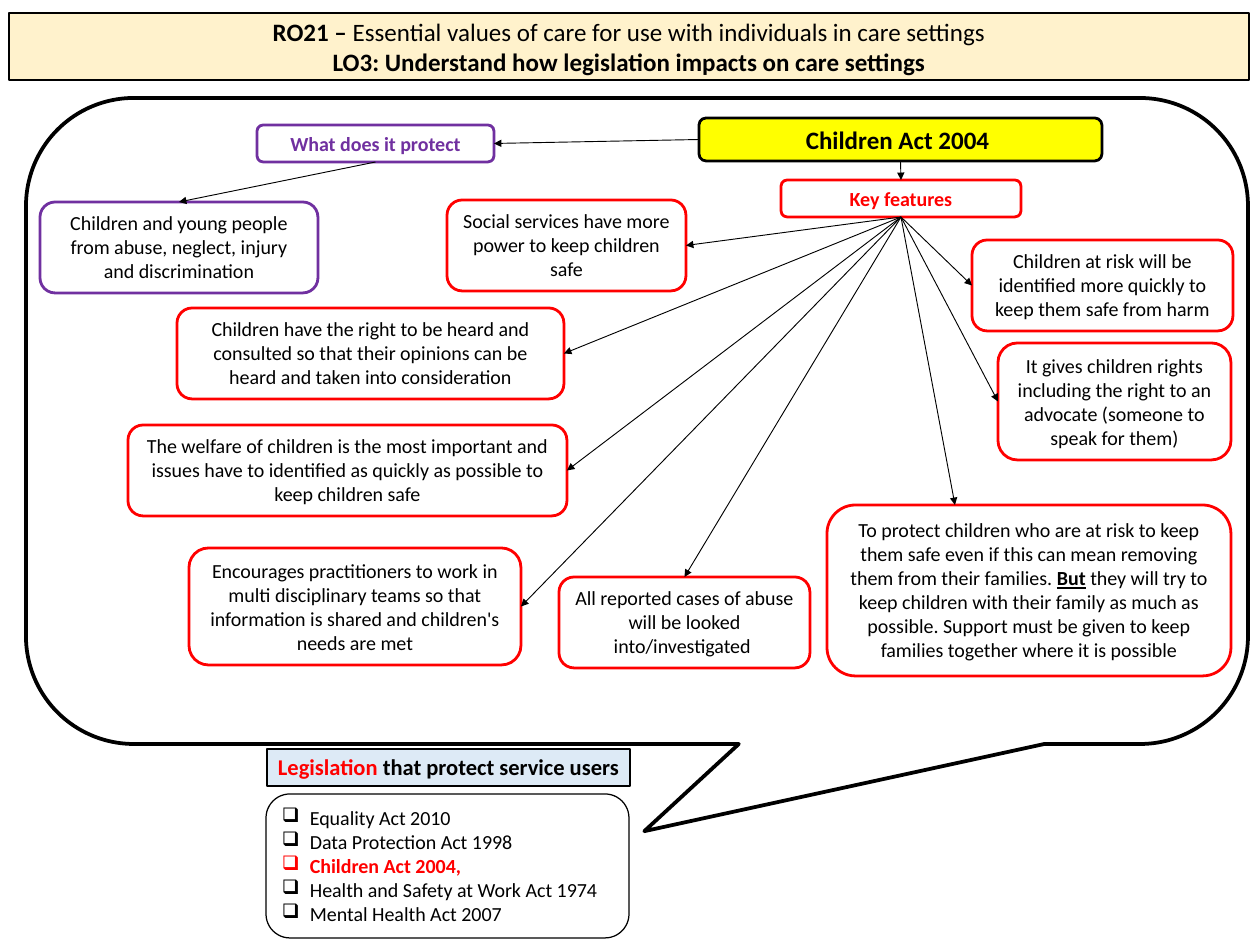
from lxml import etree
from pptx import Presentation
from pptx.dml.color import RGBColor
from pptx.enum.shapes import MSO_CONNECTOR, MSO_SHAPE
from pptx.enum.text import MSO_ANCHOR, MSO_AUTO_SIZE, PP_ALIGN
from pptx.oxml.ns import qn
from pptx.util import Pt

PX = 10160  # EMU per px, 90 px to the inch
BLACK = RGBColor(0x00, 0x00, 0x00)
WHITE = RGBColor(0xFF, 0xFF, 0xFF)
RED = RGBColor(0xFF, 0x00, 0x00)
PURPLE = RGBColor(0x70, 0x30, 0xA0)
YELLOW = RGBColor(0xFF, 0xFF, 0x00)
CREAM = RGBColor(0xFF, 0xF2, 0xCC)
BLUE = RGBColor(0xDD, 0xEA, 0xF6)
RECT = MSO_SHAPE.RECTANGLE
ROUND = MSO_SHAPE.ROUNDED_RECTANGLE
CALLOUT = MSO_SHAPE.ROUNDED_RECTANGULAR_CALLOUT
LINE = MSO_CONNECTOR.STRAIGHT
CENTER, LEFT = PP_ALIGN.CENTER, PP_ALIGN.LEFT
TOP, MIDDLE = MSO_ANCHOR.TOP, MSO_ANCHOR.MIDDLE
GROW, FIXED = MSO_AUTO_SIZE.SHAPE_TO_FIT_TEXT, MSO_AUTO_SIZE.NONE
UP, WEST, DOWN, EAST = range(4)

prs = Presentation()
prs.slide_width, prs.slide_height = 1260 * PX, 945 * PX
slide = prs.slides.add_slide(prs.slide_layouts[5])
shapes = slide.shapes


def box(kind, place, fill, edge, width, size=16, color=BLACK, bold=False, text=""):
    """Add a box with one centred style of text."""
    shape = shapes.add_shape(kind, *[n * PX for n in place])
    shape.shadow.inherit = False
    if fill is None:
        shape.fill.background()
    else:
        shape.fill.solid()
        shape.fill.fore_color.rgb = fill
    shape.line.color.rgb = edge
    shape.line.width = Pt(width)
    if text:
        frame = shape.text_frame
        frame.text = text
        frame.word_wrap = True
        frame.auto_size = GROW
        frame.vertical_anchor = TOP
        for para in frame.paragraphs:
            para.alignment = CENTER
            for run in para.runs:
                font = run.font
                font.name, font.size, font.bold = "Calibri", Pt(size), bold
                font.color.rgb = color
    return shape


def arrow(start, side, end, goal):
    """Join two boxes; goal is a side number or a free (x, y) point."""
    line = shapes.add_connector(LINE, 0, 0, 0, 0)
    line.begin_connect(start, side)
    if isinstance(goal, tuple):
        line.end_x, line.end_y = [n * PX for n in goal]
    else:
        line.end_connect(end, goal)
    line.line.color.rgb = BLACK
    line.line.width = Pt(0.75)
    tip = etree.SubElement(line.line._get_or_add_ln(), qn("a:tailEnd"))
    tip.set("type", "triangle")
    etree.SubElement(line._element.spPr, qn("a:effectLst"))


# Title banner
title = shapes.title
title.left, title.top, title.width, title.height = [n * PX for n in (9, 13, 1240, 67)]
title.fill.solid()
title.fill.fore_color.rgb = CREAM
title.line.color.rgb = BLACK
title.line.width = Pt(1)
frame = title.text_frame
frame.auto_size = FIXED
frame.vertical_anchor = MIDDLE
frame.text = "RO21 – \nLO3: Understand how legislation impacts on care settings"
run = frame.paragraphs[0].add_run()
run.text = "Essential values of care for use with individuals in care settings"
for para in frame.paragraphs:
    para.alignment = CENTER
    for part in para.runs:
        part.font.name, part.font.size = "Calibri", Pt(20)
        part.font.bold = True
        part.font.color.rgb = BLACK
run.font.bold = False

# Speech bubble
bubble = box(CALLOUT, (26, 98, 1222, 646), None, BLACK, 3)
for i, value in enumerate((0.006, 0.635, 0.167)):
    bubble.adjustments[i] = value

# Headings
act = box(ROUND, (699, 118, 403, 43), YELLOW, BLACK, 2.25, 20, BLACK, True,
          "Children Act 2004 ")
key = box(ROUND, (781, 180, 240, 37), WHITE, RED, 2.25, 16, RED, True, "Key features")
ask = box(ROUND, (257, 125, 237, 37), WHITE, PURPLE, 2.25, 16, PURPLE, True,
          "What does it protect")
young = box(ROUND, (40, 202, 278, 91), None, PURPLE, 2.25,
            text="Children and young people from abuse, neglect, injury and discrimination")
arrow(act, WEST, ask, EAST)
arrow(ask, DOWN, young, UP)
arrow(act, DOWN, key, UP)

# Key features, each with an arrow from its heading
features = [
    ((447, 200, 239, 91), EAST, "Social services have more power to keep children safe"),
    ((177, 308, 387, 91), EAST, "Children have the right to be heard and consulted so that "
     "their opinions can be heard and taken into consideration"),
    ((128, 425, 439, 91), EAST, "The welfare of children is the most important and issues "
     "have to identified as quickly as possible to keep children safe"),
    ((189, 548, 332, 117), EAST, "Encourages practitioners to work in multi disciplinary "
     "teams so that information is shared and children's needs are met"),
    ((559, 577, 251, 91), UP, "All reported cases of abuse will be looked into/investigated "),
    ((972, 240, 261, 91), WEST, "Children at risk will be identified more quickly to keep "
     "them safe from harm"),
    ((998, 343, 233, 117), WEST, "It gives children rights including the right to an "
     "advocate (someone to speak for them)"),
    ((827, 505, 404, 171), (955, 505), "To protect children who are at risk to keep them safe "
     "even if this can mean removing them from their families. "),
]
for place, goal, text in features:
    card = box(ROUND, place, None, RED, 2.25, text=text)
    arrow(key, DOWN, card, goal)

# The last card goes on after a stressed word
para = card.text_frame.paragraphs[0]
for text, stress in (("But", True), (" they will try to keep children with their family as "
                     "much as possible. Support must be given to keep families together "
                     "where it is possible", False)):
    run = para.add_run()
    run.text = text
    run.font.name, run.font.size = "Calibri", Pt(16)
    run.font.bold = run.font.underline = stress
    run.font.color.rgb = BLACK

# Legislation heading
head = box(RECT, (267, 749, 363, 37), BLUE, BLACK, 1, 18, RED, True, "Legislation ")
run = head.text_frame.paragraphs[0].add_run()
run.text = "that protect service users"
run.font.name, run.font.size, run.font.bold = "Calibri", Pt(18), True
run.font.color.rgb = BLACK

# Checklist of acts
acts = ["Equality Act 2010", "Data Protection Act 1998", "Children Act 2004,",
        "Health and Safety at Work Act 1974", "Mental Health Act 2007"]
checks = box(ROUND, (266, 794, 363, 144), WHITE, BLACK, 1, text="\n".join(acts))
for i, para in enumerate(checks.text_frame.paragraphs):
    para.alignment = LEFT
    color = RED if i == 2 else BLACK
    font = para.runs[0].font
    font.color.rgb, font.bold = color, i == 2
    props = para._p.get_or_add_pPr()
    props.set("marL", str(28 * PX))
    props.set("indent", str(-28 * PX))
    tint = etree.SubElement(props, qn("a:buClr"))
    etree.SubElement(tint, qn("a:srgbClr")).set("val", str(color))
    etree.SubElement(props, qn("a:buChar")).set("char", "❑")

prs.save("out.pptx")
